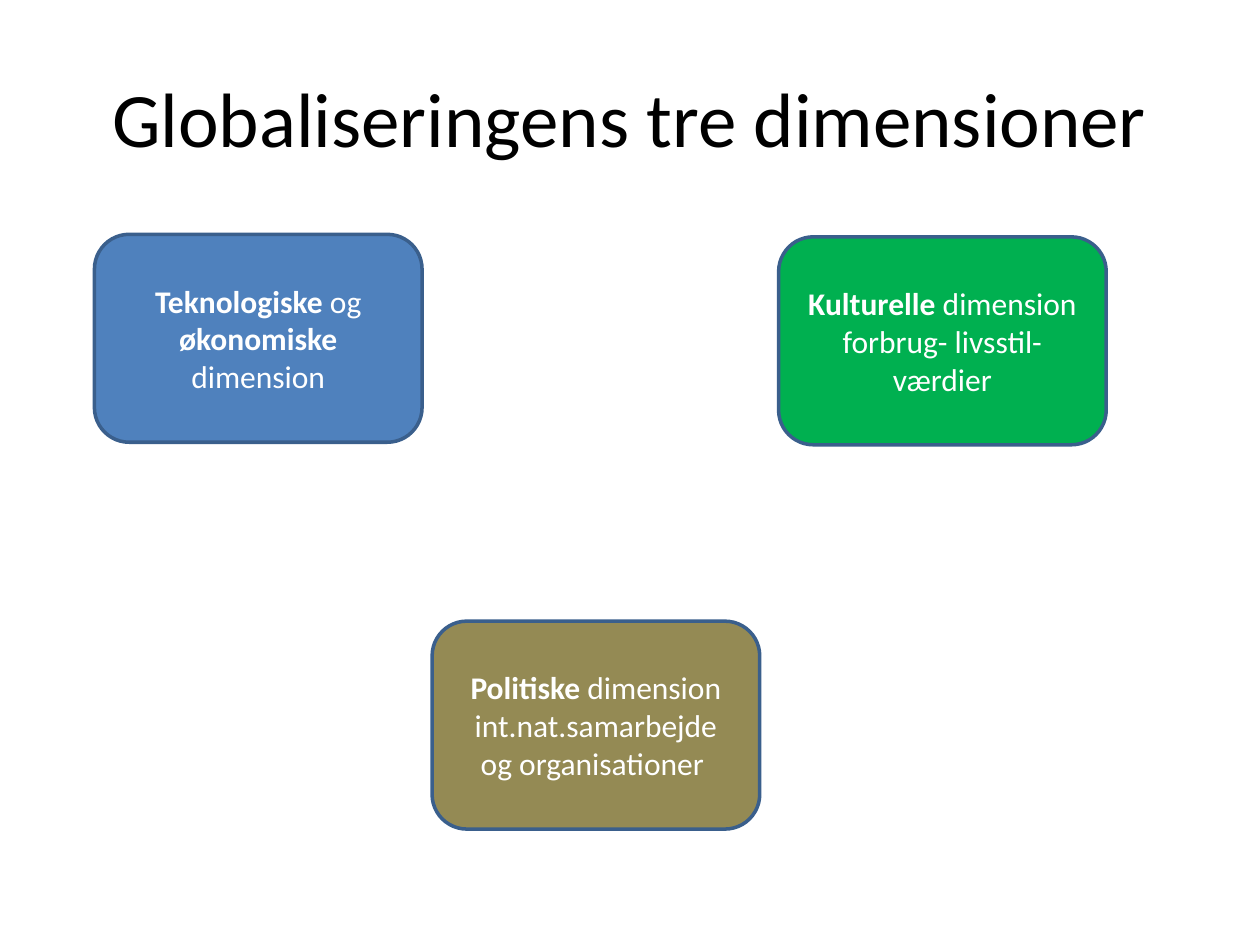
from dataclasses import dataclass

from pptx import Presentation
from pptx.dml.color import RGBColor
from pptx.enum.shapes import MSO_SHAPE
from pptx.enum.text import MSO_ANCHOR, PP_ALIGN
from pptx.slide import Slide
from pptx.util import Pt

COLORS = {
    "black": "000000",
    "white": "FFFFFF",
    "blue": "4F81BD",
    "green": "00B050",
    "olive": "948A54",
    "edge": "3A5F8C",
}
WIDTH, HEIGHT = 187.2, 118.8


@dataclass
class Phrase:
    text: str
    bold: bool = False


@dataclass
class Card:
    left: float
    top: float
    fill: str
    words: list[Phrase]


CARDS = [
    Card(54, 133.92, "blue", [
        Phrase("Teknologiske", True), Phrase(" og "),
        Phrase("økonomiske\n", True), Phrase("dimension"),
    ]),
    Card(444.96, 135.36, "green", [
        Phrase("Kulturelle", True),
        Phrase(" dimension forbrug- livsstil-\nværdier"),
    ]),
    Card(246.96, 354.96, "olive", [
        Phrase("Politiske", True),
        Phrase(" dimension\nint.nat.samarbejde\nog organisationer "),
    ]),
]


def color(name: str) -> RGBColor:
    return RGBColor.from_string(COLORS[name])


def apply(target: object, values: dict) -> None:
    for name, value in values.items():
        setattr(target, name, value)


def write(shape, words: list[Phrase], size: float, ink: str) -> None:
    frame = shape.text_frame
    apply(frame, {"word_wrap": True, "vertical_anchor": MSO_ANCHOR.MIDDLE})
    para = frame.paragraphs[0]
    para.alignment = PP_ALIGN.CENTER
    for phrase in words:
        for index, line in enumerate(phrase.text.split("\n")):
            if index:
                para.add_line_break()
            if line:
                run = para.add_run()
                run.text = line
                apply(run.font, {"name": "Calibri", "size": Pt(size), "bold": phrase.bold})
                run.font.color.rgb = color(ink)


def draw(slide: Slide, card: Card) -> None:
    shape = slide.shapes.add_shape(
        MSO_SHAPE.ROUNDED_RECTANGLE,
        Pt(card.left), Pt(card.top), Pt(WIDTH), Pt(HEIGHT),
    )
    shape.shadow.inherit = False
    shape.fill.solid()
    shape.fill.fore_color.rgb = color(card.fill)
    shape.line.color.rgb = color("edge")
    shape.line.width = Pt(2)
    write(shape, card.words, 18, "white")


def main() -> None:
    deck = Presentation()
    apply(deck, {"slide_width": Pt(720), "slide_height": Pt(540)})
    slide = deck.slides.add_slide(deck.slide_layouts[5])
    title = slide.shapes.title
    apply(title, {"left": Pt(36), "top": Pt(21.6), "width": Pt(648), "height": Pt(90)})
    write(title, [Phrase("Globaliseringens tre dimensioner")], 44, "black")
    for card in CARDS:
        draw(slide, card)
    deck.save("out.pptx")


if __name__ == "__main__":
    main()
